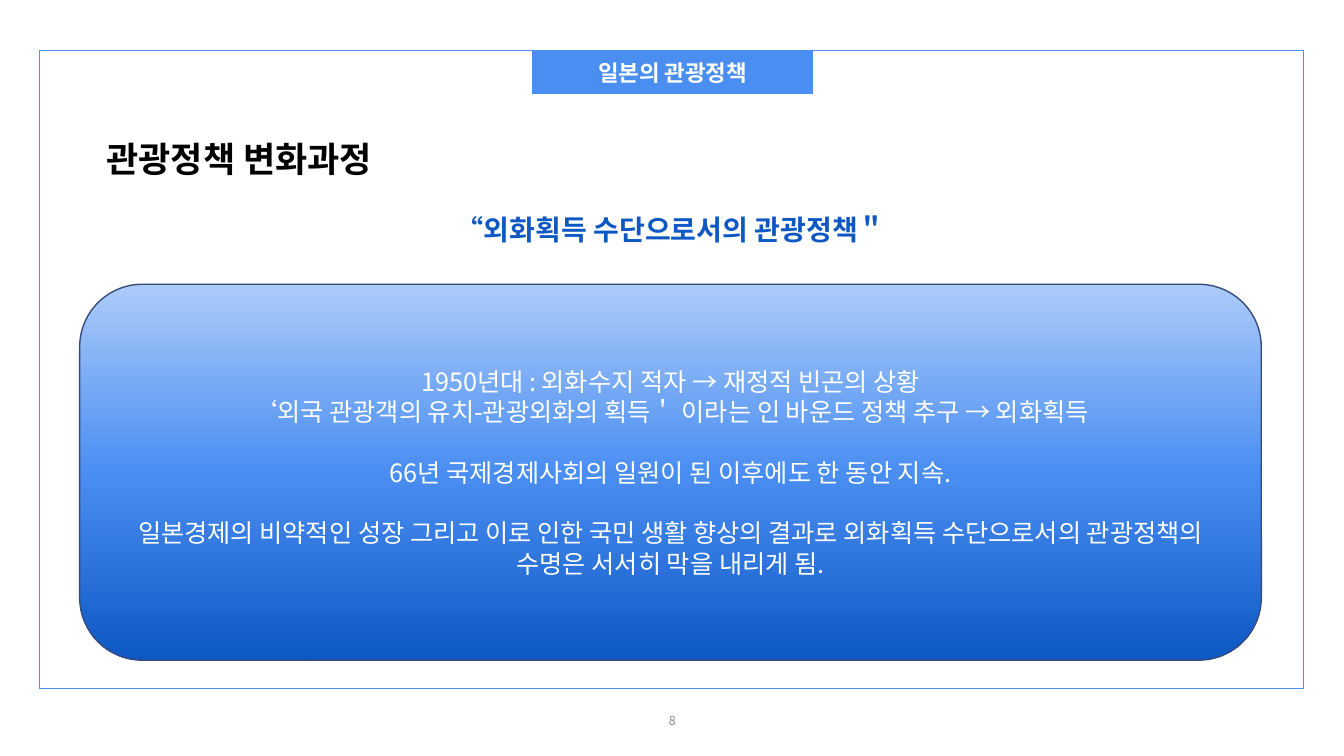
from copy import deepcopy

from lxml import etree
from pptx import Presentation
from pptx.dml.color import RGBColor
from pptx.enum.shapes import MSO_SHAPE
from pptx.enum.text import MSO_ANCHOR, MSO_AUTO_SIZE, PP_ALIGN
from pptx.oxml.ns import qn
from pptx.util import Inches, Pt

RECT, ROUNDED = MSO_SHAPE.RECTANGLE, MSO_SHAPE.ROUNDED_RECTANGLE
CENTER, JUSTIFY = PP_ALIGN.CENTER, PP_ALIGN.JUSTIFY
TOP, MIDDLE = MSO_ANCHOR.TOP, MSO_ANCHOR.MIDDLE
GROW = MSO_AUTO_SIZE.SHAPE_TO_FIT_TEXT

WIDTH, HEIGHT = Inches(13.33), Inches(7.5)
FONT = "Noto Sans CJK KR"
PANEL_GAP = 21.6
COLORS = {
    "light": "ACCBF9",
    "blue": "4A8EF2",
    "deep": "0E58C4",
    "edge": "374B7F",
    "white": "FFFFFF",
    "black": "000000",
    "gray": "8C8C8C",
}
PANEL_TEXT = [
    ("1950년대 : 외화수지 적자 → 재정적 빈곤의 상황", 0),
    ("‘외국 관광객의 유치-관광외화의 획득＇ 이라는 인 바운드 정책 추구 → 외화획득", 0),
    ("66년 국제경제사회의 일원이 된 이후에도 한 동안 지속.", PANEL_GAP),
    ("일본경제의 비약적인 성장 그리고 이로 인한 국민 생활 향상의 결과로 "
     "외화획득 수단으로서의 관광정책의 수명은 서서히 막을 내리게 됨.", PANEL_GAP),
]


def rgb(name):
    return RGBColor.from_string(COLORS[name])


def place(left, top, width, height):
    return [int(share * side / 100) for share, side in
            ((left, WIDTH), (top, HEIGHT), (width, WIDTH), (height, HEIGHT))]


def write(s, lines, size, color, bold=False, align=CENTER, anchor=MIDDLE):
    tf = s.text_frame
    tf.word_wrap = True
    tf.vertical_anchor = anchor
    for i, (text, gap) in enumerate(lines):
        p = tf.add_paragraph() if i else tf.paragraphs[0]
        p.alignment = align
        p.space_before = Pt(gap)
        r = p.add_run()
        r.text = text
        r.font.name = FONT
        r.font.size = Pt(size)
        r.font.bold = bold
        r.font.color.rgb = rgb(color)
        etree.SubElement(r.font._element, qn("a:ea"), typeface=FONT)


def add_box(slide, kind, box, line, fill=None):
    s = slide.shapes.add_shape(kind, *place(*box))
    s.shadow.inherit = False
    s.line.color.rgb = rgb(line)
    s.line.width = Pt(1)
    if fill:
        s.fill.solid()
        s.fill.fore_color.rgb = rgb(fill)
    else:
        s.fill.background()
    return s


def add_label(slide, box, text, size, color, grow=False, **style):
    s = slide.shapes.add_textbox(*place(*box))
    write(s, [(text, 0)], size, color, **style)
    if grow:
        s.text_frame.auto_size = GROW


def shade_down(s, names):
    s.fill.gradient()
    s.fill.gradient_angle = 270
    stops = s._element.spPr.find(qn("a:gradFill")).find(qn("a:gsLst"))
    while len(stops) < len(names):
        stops.append(deepcopy(stops[-1]))
    for i, (stop, name) in enumerate(zip(s.fill.gradient_stops, names)):
        stop.position = i / (len(names) - 1)
        stop.color.rgb = rgb(name)


def main():
    prs = Presentation()
    prs.slide_width, prs.slide_height = WIDTH, HEIGHT
    slide = prs.slides.add_slide(prs.slide_layouts[6])

    add_label(slide, (38.78, 92.67, 22.5, 5.33), "8", 9, "gray")
    tab = add_box(slide, RECT, (39.61, 6.67, 20.86, 5.73), "blue", "blue")
    write(tab, [("일본의 관광정책", 0)], 16, "white", bold=True)
    add_box(slide, RECT, (2.93, 6.67, 94.07, 84.4), "blue")
    add_label(slide, (4.43, 27.47, 91, 5.87), "“외화획득 수단으로서의 관광정책＂",
              20, "deep", grow=True, bold=True, anchor=TOP)
    add_label(slide, (7.2, 17.6, 87.85, 6.93), "관광정책 변화과정",
              25, "black", grow=True, bold=True, align=JUSTIFY, anchor=TOP)
    panel = add_box(slide, ROUNDED, (5.93, 37.6, 87.92, 49.73), "edge")
    shade_down(panel, ["light", "blue", "deep"])
    write(panel, PANEL_TEXT, 18, "white")

    prs.save("out.pptx")


if __name__ == "__main__":
    main()
